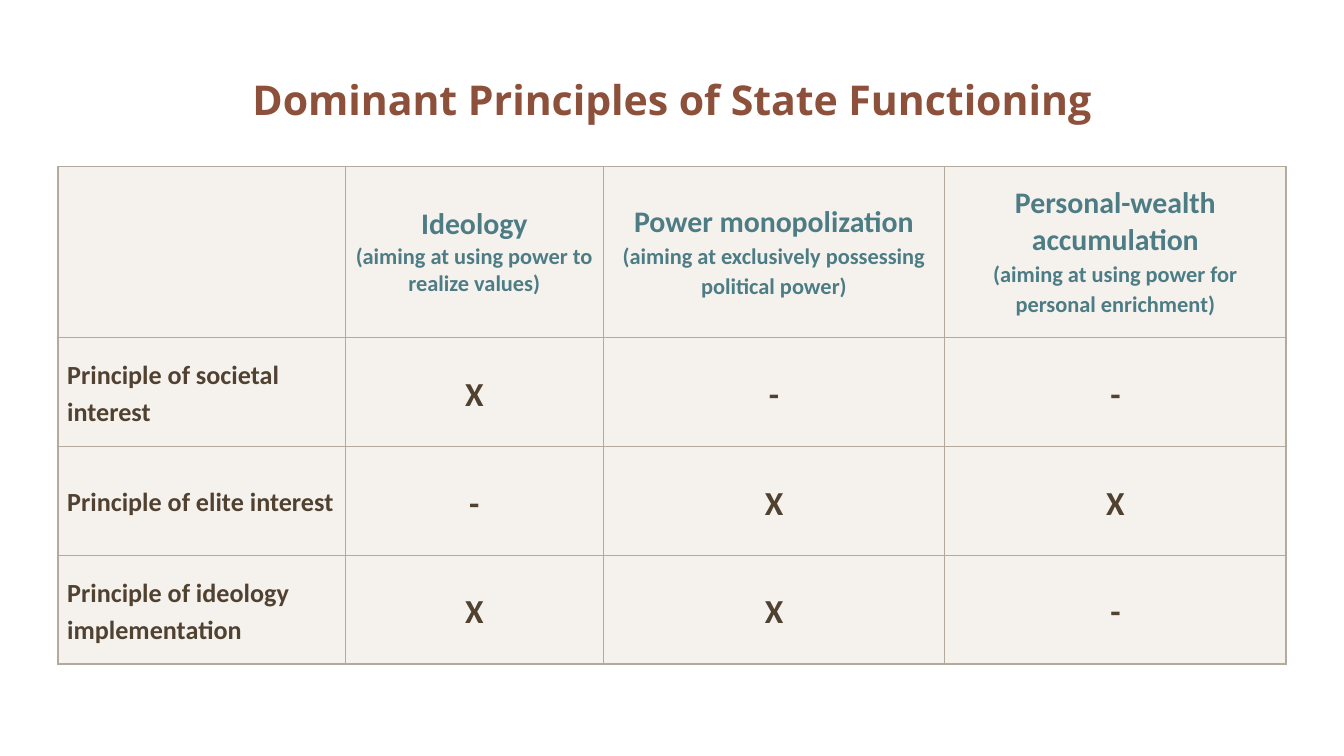
from lxml import etree
from pptx import Presentation
from pptx.dml.color import RGBColor
from pptx.enum import text
from pptx.oxml import ns
from pptx.util import Inches, Pt

RUST = RGBColor(0x8D, 0x50, 0x3B)
TEAL = RGBColor(0x4D, 0x7C, 0x85)
BROWN = RGBColor(0x50, 0x41, 0x31)
SAND = RGBColor(0xEF, 0xEA, 0xE4)
TAUPE = RGBColor(0xB3, 0xA9, 0x9D)

TITLE = "Dominant Principles of State Functioning"
HEADERS = [
    ("Ideology", "(aiming at using power to realize values)"),
    ("Power monopolization", "(aiming at exclusively possessing political power)"),
    ("Personal-wealth accumulation", "(aiming at using power for personal enrichment)"),
]
PRINCIPLES = [
    ("Principle of societal interest", "X", "-", "-"),
    ("Principle of elite interest", "-", "X", "X"),
    ("Principle of ideology implementation", "X", "X", "-"),
]
COLUMN_WIDTHS = [2.14, 1.92, 2.54, 2.54]
ROW_HEIGHTS = [1.27, 0.81, 0.81, 0.81]
CENTER, LEFT = text.PP_ALIGN.CENTER, text.PP_ALIGN.LEFT


def add_span(para, words, size, color, font="Calibri"):
    span = para.add_run()
    span.text = words
    span.font.name = font
    span.font.size = Pt(size)
    span.font.bold = True
    span.font.color.rgb = color


def add_border(cell, position, side, width):
    line = etree.Element(ns.qn(f"a:ln{side}"), w=str(Pt(width)))
    fill = etree.SubElement(line, ns.qn("a:solidFill"))
    etree.SubElement(fill, ns.qn("a:srgbClr"), val=str(TAUPE))
    cell._tc.get_or_add_tcPr().insert(position, line)


def style_cell(cell, row, column):
    cell.vertical_anchor = text.MSO_ANCHOR.MIDDLE
    cell.margin_left = cell.margin_right = Inches(0.07)
    cell.margin_top = cell.margin_bottom = 0
    cell.fill.solid()
    cell.fill.fore_color.rgb = SAND
    color = cell._tc.tcPr.find(".//" + ns.qn("a:srgbClr"))
    etree.SubElement(color, ns.qn("a:alpha"), val="60000")
    outer_sides = {
        "L": column == 0,
        "R": column == len(COLUMN_WIDTHS) - 1,
        "T": row == 0,
        "B": row == len(ROW_HEIGHTS) - 1,
    }
    for position, (side, outer) in enumerate(outer_sides.items()):
        add_border(cell, position, side, 1 if outer else 0.5)


def fill_header(cell, column, name, aim):
    para = cell.text_frame.paragraphs[0]
    para.alignment = CENTER
    add_span(para, name, 16, TEAL)
    if column == 1:
        para.add_line_break()
    else:
        para = cell.text_frame.add_paragraph()
        para.alignment = CENTER
        para.line_spacing = 1.1
    add_span(para, aim, 12, TEAL)


deck = Presentation()
deck.slide_width = Inches(10)
deck.slide_height = deck.slide_width * 9 // 16
page = deck.slides.add_slide(deck.slide_layouts[5])

title = page.shapes.title
title.left, title.top = Inches(0.12), Inches(0.24)
title.width, title.height = Inches(9.76), Inches(1)
title.text_frame.vertical_anchor = text.MSO_ANCHOR.MIDDLE
title_para = title.text_frame.paragraphs[0]
title_para.alignment = CENTER
add_span(title_para, TITLE, 22, RUST, "Open Sans")

table = page.shapes.add_table(
    len(ROW_HEIGHTS), len(COLUMN_WIDTHS), Inches(0.43), Inches(1.24),
    Inches(sum(COLUMN_WIDTHS)), Inches(sum(ROW_HEIGHTS)),
).table
table.first_row = table.horz_banding = False
for column, width in enumerate(COLUMN_WIDTHS):
    table.columns[column].width = Inches(width)
for row, height in enumerate(ROW_HEIGHTS):
    table.rows[row].height = Inches(height)
    for column in range(len(COLUMN_WIDTHS)):
        style_cell(table.cell(row, column), row, column)

for column, (name, aim) in enumerate(HEADERS, start=1):
    fill_header(table.cell(0, column), column, name, aim)
for row, entries in enumerate(PRINCIPLES, start=1):
    for column, entry in enumerate(entries):
        para = table.cell(row, column).text_frame.paragraphs[0]
        para.alignment = CENTER if column else LEFT
        para.line_spacing = 1.15
        add_span(para, entry, 18 if column else 14, BROWN)

deck.save("out.pptx")
